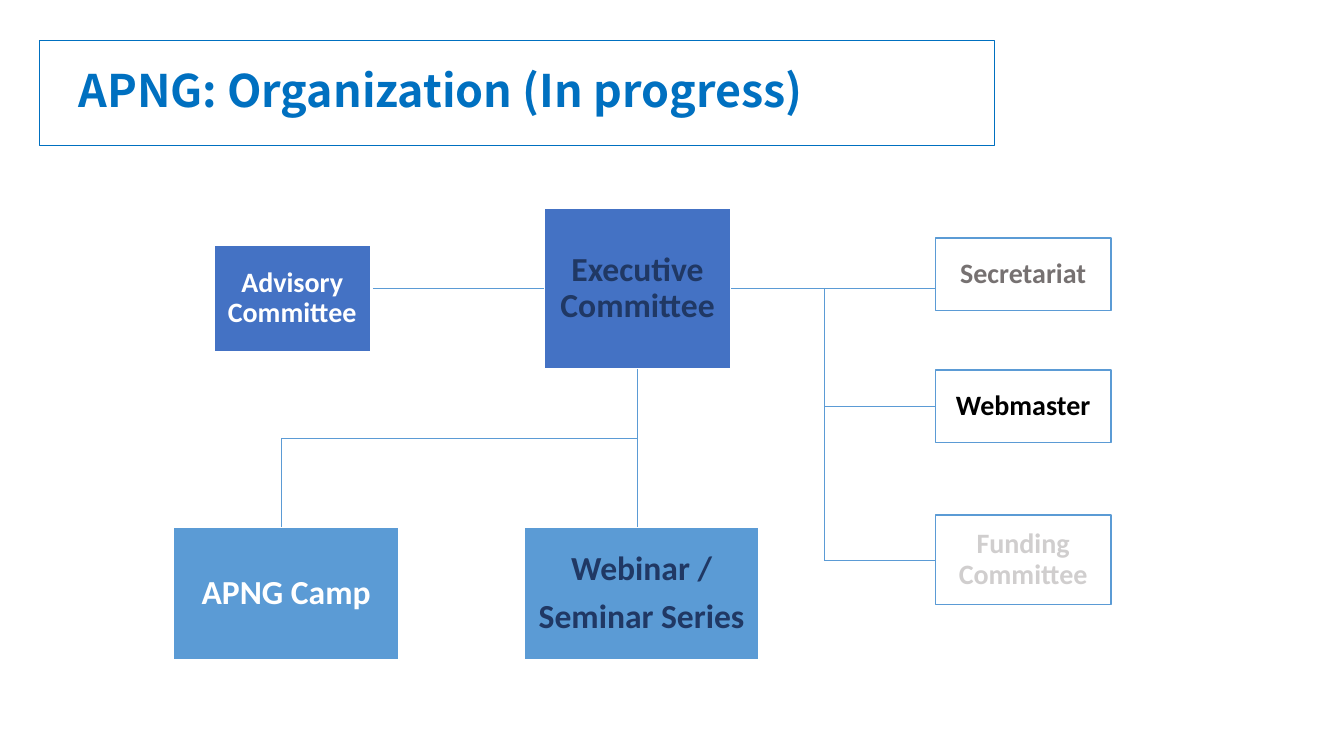
from pptx import Presentation
from pptx.dml.color import RGBColor
from pptx.enum.shapes import MSO_CONNECTOR, MSO_SHAPE
from pptx.enum.text import MSO_ANCHOR, PP_ALIGN
from pptx.oxml.ns import qn
from pptx.util import Pt
from lxml.etree import SubElement

COLORS = {
    "title": "0070C0", "navy": "203864", "royal": "4472C4", "sky": "5B9BD5",
    "white": "FFFFFF", "black": "000000", "gray": "767171", "pale": "D0CECE",
}
TOP, LEFT, BOTTOM, RIGHT = range(4)


def rgb(name):
    return RGBColor.from_string(COLORS[name])


def add_text(sp, text, size, color, font="Calibri", align=PP_ALIGN.CENTER,
             insets=(0.72, 0.72, 0.72, 0.72), gap=8.4):
    tf = sp.text_frame
    tf.word_wrap = True
    tf.vertical_anchor = MSO_ANCHOR.MIDDLE
    tf.margin_left, tf.margin_top, tf.margin_right, tf.margin_bottom = map(Pt, insets)
    lines = text.split("\n")
    for i, line in enumerate(lines):
        p = tf.add_paragraph() if i else tf.paragraphs[0]
        p.alignment = align
        p.line_spacing = 0.9
        if i < len(lines) - 1:
            p.space_after = Pt(gap)
        r = p.add_run()
        r.text = line
        r.font.name = font
        r.font.size = Pt(size)
        r.font.bold = True
        r.font.color.rgb = rgb(color)


def add_box(s, x, y, w, h, fill, line, width):
    sp = s.shapes.add_shape(MSO_SHAPE.RECTANGLE, Pt(x), Pt(y), Pt(w), Pt(h))
    sp.shadow.inherit = False
    if fill:
        sp.fill.solid()
        sp.fill.fore_color.rgb = rgb(fill)
    else:
        sp.fill.background()
    sp.line.color.rgb = rgb(line)
    sp.line.width = Pt(width)
    return sp


def add_line(s, x1, y1, x2, y2, begin=None, end=None, kind=MSO_CONNECTOR.STRAIGHT):
    cx = s.shapes.add_connector(kind, Pt(x1), Pt(y1), Pt(x2), Pt(y2))
    cx.line.color.rgb = rgb("sky")
    cx.line.width = Pt(0.5)
    SubElement(cx._element.spPr, qn("a:effectLst"))
    if begin:
        cx.begin_connect(*begin)
    if end:
        cx.end_connect(*end)
    return cx


def add_title(s, x, y, w, h):
    sp = add_box(s, x, y, w, h, None, "title", 0.1)
    add_text(sp, "APNG: Organization (In progress)", 32, "title",
             font="Noto Sans CJK KR", align=PP_ALIGN.LEFT, insets=(28, 3.6, 7.2, 3.6))


def add_organization(s, x, y):
    # Committees, activities and offices
    units = [
        ("Executive Committee", 265, 0, 133.2, 115.2, "royal", 24, "navy"),
        ("Funding Committee", 544.4, 219.6, 125.3, 64.1, "white", 20, "pale"),
        ("Advisory Committee", 28.8, 26.7, 112.3, 76.3, "royal", 20, "white"),
        ("Secretariat", 544.4, 21.6, 125.3, 51.8, "white", 20, "gray"),
        ("APNG Camp", 0, 228.3, 161.3, 95, "sky", 24, "white"),
        ("Webinar /\nSeminar Series", 250.6, 228.3, 167.8, 95, "sky", 24, "navy"),
        ("Webmaster", 544.4, 115.9, 125.3, 51.8, "white", 20, "black"),
    ]
    boxes = {}
    for text, dx, dy, w, h, fill, size, color in units:
        line, width = ("sky", 1) if fill == "white" else ("white", 1.5)
        sp = add_box(s, x + dx, y + dy, w, h, fill, line, width)
        add_text(sp, text, size, color)
        boxes[text] = sp

    executive = boxes["Executive Committee"]
    webmaster, funding = boxes["Webmaster"], boxes["Funding Committee"]
    mid_x, mid_y = x + 331.6, y + 57.6
    trunk_x, office_x = x + 464.8, x + 544.4
    branch_y, activity_y = y + 165, y + 228.3
    camp_x = x + 77.1

    # Trunk and branches to the offices
    trunk = add_line(s, x + 398.2, mid_y, trunk_x, y + 251.65,
                     begin=(executive, RIGHT), kind=MSO_CONNECTOR.ELBOW)
    trunk._element.spPr.prstGeom.set("prst", "bentConnector2")
    add_line(s, trunk_x, mid_y, office_x, mid_y)
    for office, dy in ((webmaster, 141.8), (funding, 251.65)):
        add_line(s, trunk_x, y + dy, office_x, y + dy, end=(office, LEFT))

    # Link to the advisers
    add_line(s, x + 142.6, mid_y, x + 265, mid_y, end=(executive, LEFT))

    # Branches to the activities
    add_line(s, mid_x, y + 115.2, mid_x, branch_y, begin=(executive, BOTTOM))
    add_line(s, camp_x, branch_y, mid_x, branch_y)
    for drop_x in (mid_x, camp_x):
        add_line(s, drop_x, branch_y, drop_x, activity_y)


def main():
    prs = Presentation()
    prs.slide_width, prs.slide_height = Pt(960), Pt(540)
    s = prs.slides.add_slide(prs.slide_layouts[6])
    add_title(s, 28, 28.8, 682, 75)
    add_organization(s, 123.8, 148.3)
    prs.save("out.pptx")


if __name__ == "__main__":
    main()
